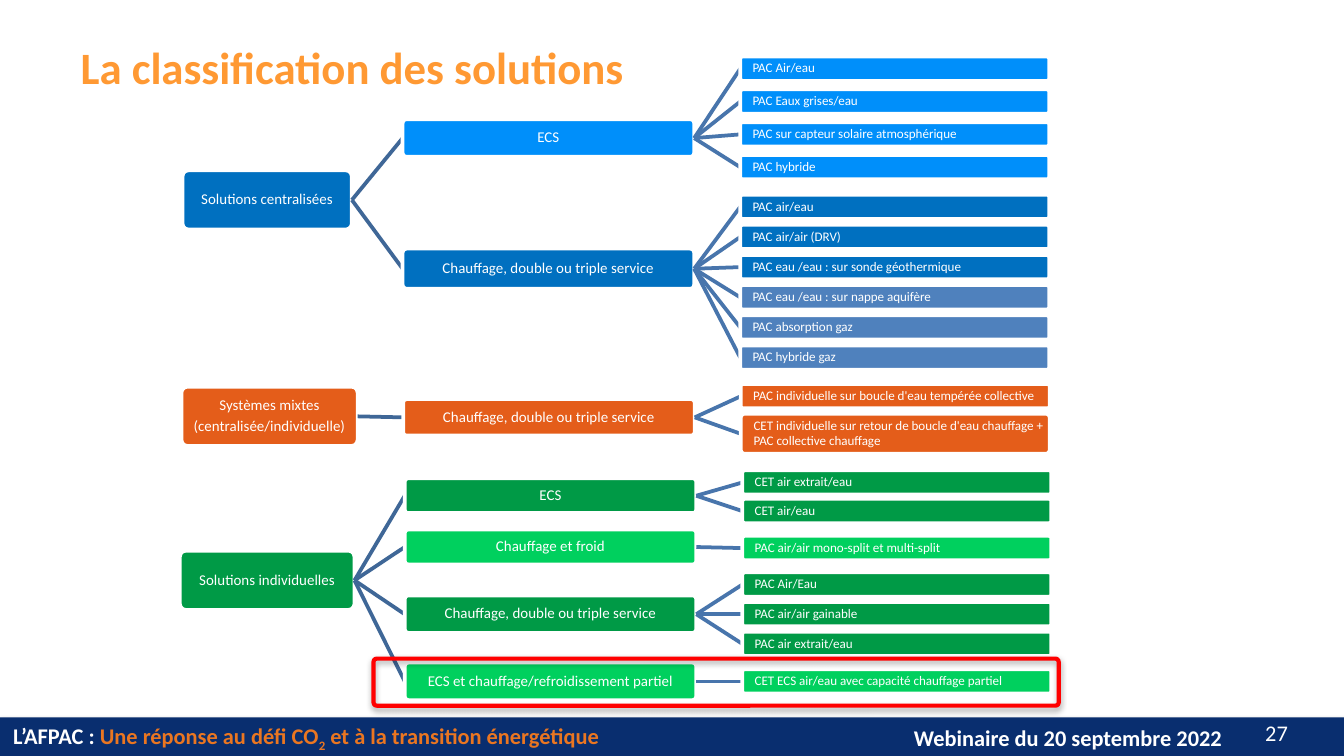
from dataclasses import dataclass

from lxml.etree import SubElement
from pptx import Presentation
from pptx.dml.color import RGBColor
from pptx.enum.shapes import MSO_CONNECTOR, MSO_SHAPE
from pptx.enum.text import MSO_ANCHOR, PP_ALIGN
from pptx.oxml.ns import qn
from pptx.util import Cm, Pt

WHITE, NAVY, AMBER, RED = "FFFFFF", "092E6F", "EA7621", "FF0000"
SKY, BLUE, STEEL = "008FFA", "0070C0", "4F81BD"
RUST, GREEN, LIME = "E45D1A", "009A46", "00D05E"
LINK, TWIG = "3F6797", "4875AC"

MID_W, LEAF_W, LEAF_H, TALL_H = 5.51, 5.84, 0.46, 0.76
MID_GAP = 6.38   # from the left of a branch to the left of its leaves
ROOT_H = 1.12


@dataclass
class Branch:
    text: str
    mid: float      # centre, from the top of the tree
    high: float
    fill: str
    top: float      # first leaf, from the top of the tree
    step: float
    leaves: list
    late: str = ""  # fill from the fourth leaf on


def rgb(code):
    return RGBColor.from_string(code)


def style(para, size, color=WHITE, bold=False):
    font = para.font
    font.name, font.size, font.bold = "Calibri", Pt(size), bold
    font.color.rgb = rgb(color)


def shade(shape):
    """Soft shadow straight below the shape."""
    shape.shadow.inherit = False
    effects = shape._element.spPr.find(qn("a:effectLst"))
    outer = SubElement(effects, qn("a:outerShdw"), blurRad="40000",
                       dist="23000", dir="5400000", rotWithShape="0")
    color = SubElement(outer, qn("a:srgbClr"), val="000000")
    SubElement(color, qn("a:alpha"), val="35000")


def node(slide, box, text, fill, size, align, pad):
    shape = slide.shapes.add_shape(MSO_SHAPE.ROUNDED_RECTANGLE, *map(Cm, box))
    shape.adjustments[0] = 0.1
    shape.shadow.inherit = False
    shape.fill.solid()
    shape.fill.fore_color.rgb = rgb(fill)
    shape.line.color.rgb = rgb(WHITE)
    shape.line.width = Pt(2)
    frame = shape.text_frame
    frame.word_wrap = True
    frame.vertical_anchor = MSO_ANCHOR.MIDDLE
    frame.margin_left = Cm(pad)
    frame.margin_right = frame.margin_top = frame.margin_bottom = Cm(0.03)
    frame.text = text
    for para in frame.paragraphs:
        para.alignment = align
        para.line_spacing = 0.9
        para.space_after = Pt(size * 0.35)
        style(para, size)
    return shape


def child(slide, parent, color, *args):
    """Add a node over the end of a line that comes from its parent."""
    line = slide.shapes.add_connector(MSO_CONNECTOR.STRAIGHT, 0, 0, 0, 0)
    line.line.color.rgb = rgb(color)
    line.line.width = Pt(2)
    SubElement(line._element.spPr, qn("a:effectLst"))
    shape = node(slide, *args)
    line.begin_connect(parent, 3)
    line.end_connect(shape, 1)
    return shape


def tree(slide, box, text, fill, wide, mid, branches):
    left, top, width = box
    leaf_x = left + width - LEAF_W
    mid_x = leaf_x - MID_GAP
    center = PP_ALIGN.CENTER
    root = node(slide, (left, top + mid - ROOT_H / 2, wide, ROOT_H),
                text, fill, 8, center, 0.03)
    for part in branches:
        spot = (mid_x, top + part.mid - part.high / 2, MID_W, part.high)
        stem = child(slide, root, LINK, spot, part.text, part.fill, 8, center, 0.03)
        for i, leaf in enumerate(part.leaves):
            high = TALL_H if len(leaf) > 60 else LEAF_H
            spot = (leaf_x, top + part.top + i * part.step, LEAF_W, high)
            tint = part.late if part.late and i > 2 else part.fill
            child(slide, stem, TWIG, spot, leaf, tint, 7, PP_ALIGN.LEFT, 0.22)


def label(slide, box, runs, align, size=12, bold=True):
    frame = slide.shapes.add_textbox(*map(Cm, box)).text_frame
    frame.word_wrap = True
    frame.vertical_anchor = MSO_ANCHOR.MIDDLE
    para = frame.paragraphs[0]
    para.alignment = align
    style(para, size, WHITE, bold)
    for text, color, base in runs:
        run = para.add_run()
        run.text = text
        run.font.color.rgb = rgb(color)
        if base:
            run._r.get_or_add_rPr().set("baseline", str(base))


def footer(slide, box):
    left, top, width, high = box
    bar = slide.shapes.add_shape(MSO_SHAPE.RECTANGLE, *map(Cm, box))
    bar.fill.solid()
    bar.fill.fore_color.rgb = rgb(NAVY)
    bar.line.fill.background()
    shade(bar)
    label(slide, (left, top, 14, 0.76),
          [("L’AFPAC :", WHITE, 0), (" Une réponse au défi CO", AMBER, 0),
           ("2", AMBER, -25000), (" et à la transition énergétique", AMBER, 0)],
          PP_ALIGN.LEFT)
    label(slide, (left + width - 10.74, top, 8.69, 0.76),
          [("Webinaire du 20 septembre 2022", WHITE, 0)], PP_ALIGN.RIGHT)
    label(slide, (left + width - 6.73, top - 0.1, 5.92, 0.76),
          [("27", WHITE, 0)], PP_ALIGN.RIGHT, bold=False)


def heading(slide, box, text):
    title = slide.shapes.title
    title.left, title.top, title.width, title.height = map(Cm, box)
    frame = title.text_frame
    frame.text = text
    frame.vertical_anchor = MSO_ANCHOR.MIDDLE
    para = frame.paragraphs[0]
    para.alignment = PP_ALIGN.LEFT
    para.line_spacing = 1.07
    para.space_after = Pt(8)
    style(para, 24, "FF9933", True)


def focus(slide, box):
    ring = slide.shapes.add_shape(MSO_SHAPE.ROUNDED_RECTANGLE, *map(Cm, box))
    ring.adjustments[0] = 0.07
    ring.fill.background()
    ring.line.color.rgb = rgb(RED)
    ring.line.width = Pt(2.25)
    shade(ring)


def main():
    deck = Presentation()
    deck.slide_width, deck.slide_height = Cm(25.4), Cm(14.29)
    slide = deck.slides.add_slide(deck.slide_layouts[5])
    both = "Chauffage, double ou triple service"

    footer(slide, (0, 13.56, 25.4, 0.79))
    heading(slide, (1.27, 0.03, 22.86, 2.39), "La classification des solutions")

    # Central systems
    tree(slide, (3.45, 1.07, 16.38), "Solutions centralisées", BLUE, 3.2, 2.71, [
        Branch("ECS", 1.54, 0.71, SKY, 0, 0.62,
               ["PAC Air/eau", "PAC Eaux grises/eau",
                "PAC sur capteur solaire atmosphérique", "PAC hybride"]),
        Branch(both, 4.01, 0.76, BLUE, 2.61, 0.57,
               ["PAC air/eau", "PAC air/air (DRV)",
                "PAC eau /eau : sur sonde géothermique",
                "PAC eau /eau : sur nappe aquifère",
                "PAC absorption gaz", "PAC hybride gaz"], STEEL),
    ])
    # Mixed systems
    tree(slide, (3.43, 7.26, 16.41),
         "Systèmes mixtes\n(centralisée/individuelle)", RUST, 3.33, 0.61, [
             Branch(both, 0.63, 0.69, RUST, 0, 0.56,
                    ["PAC individuelle sur boucle d'eau tempérée collective",
                     "CET individuelle sur retour de boucle d'eau chauffage + "
                     "PAC collective chauffage"]),
         ])
    # Individual systems
    tree(slide, (3.4, 8.89, 16.47), "Solutions individuelles", GREEN, 3.3, 2.08, [
        Branch("ECS", 0.48, 0.66, GREEN, 0, 0.54,
               ["CET air extrait/eau", "CET air/eau"]),
        Branch("Chauffage et froid", 1.45, 0.66, LIME, 1.24, 0,
               ["PAC air/air mono-split et multi-split"]),
        Branch(both, 2.72, 0.71, GREEN, 1.93, 0.56,
               ["PAC Air/Eau", "PAC air/air gainable", "PAC air extrait/eau"]),
        Branch("ECS et chauffage/refroidissement partiel", 3.99, 0.71, LIME, 3.76, 0,
               ["CET ECS air/eau avec capacité chauffage partiel"]),
    ])
    focus(slide, (7.06, 12.45, 12.95, 0.89))
    deck.save("out.pptx")


if __name__ == "__main__":
    main()
